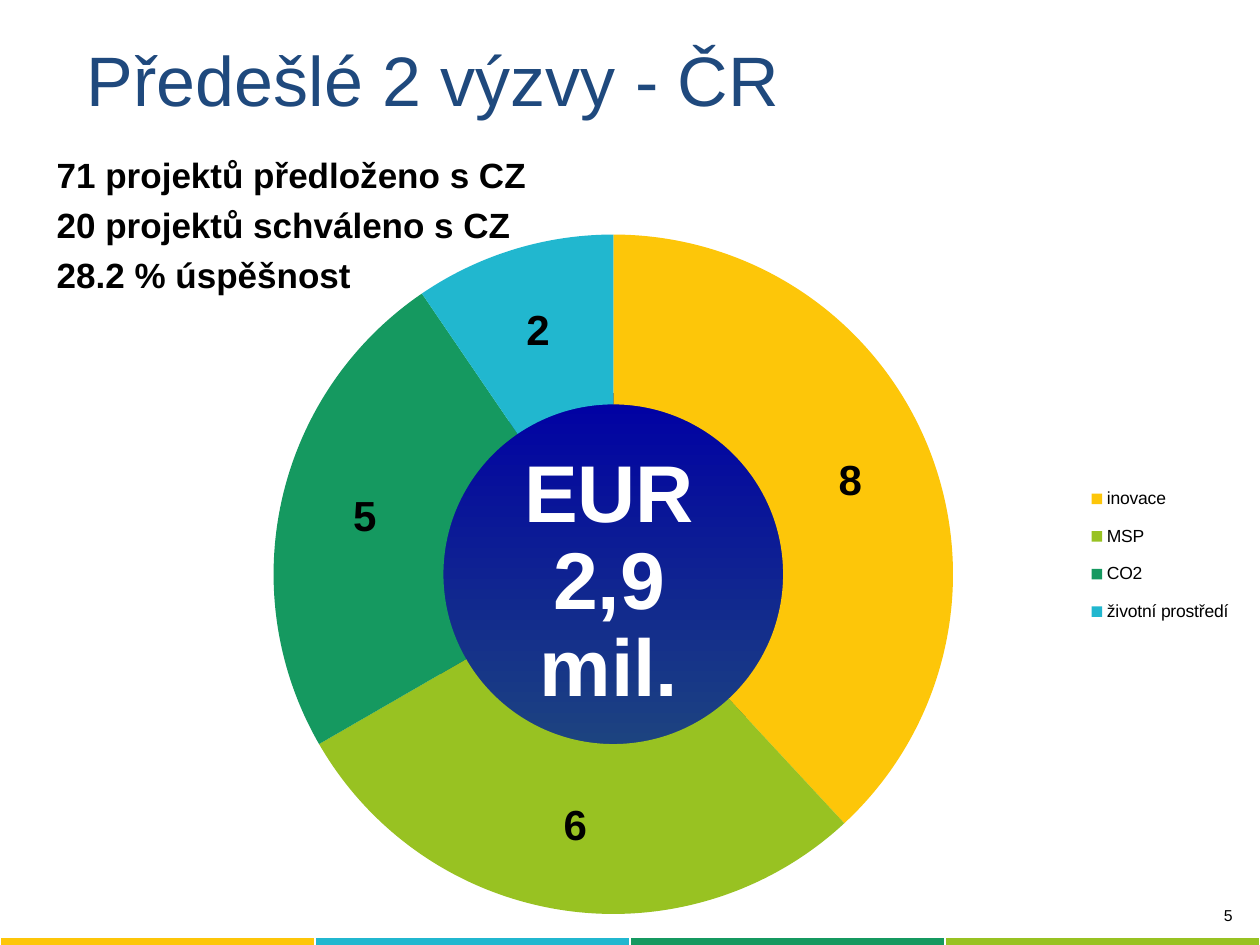
from lxml.etree import SubElement
from pptx import Presentation
from pptx.chart.data import CategoryChartData
from pptx.dml.color import RGBColor
from pptx.enum.chart import XL_CHART_TYPE, XL_LEGEND_POSITION
from pptx.enum.shapes import MSO_SHAPE
from pptx.enum.text import MSO_ANCHOR, MSO_AUTO_SIZE, PP_ALIGN
from pptx.oxml.ns import qn
from pptx.util import Pt

COLORS = {
    "title": "1F497D",
    "text": "000000",
    "inverse": "FFFFFF",
    "hub_top": "0000A4",
    "yellow": "FDC609",
    "lime": "98C222",
    "green": "159960",
    "cyan": "21B7CF",
}
STRIPE = ["yellow", "cyan", "green", "lime"]
THEMES = [
    ("inovace", 8, "yellow"),
    ("MSP", 6, "lime"),
    ("CO2", 5, "green"),
    ("životní prostředí", 2, "cyan"),
]
RESULTS = [
    "71 projektů předloženo s CZ",
    "20 projektů schváleno s CZ",
    "28.2 % úspěšnost",
]


def rgb(name):
    return RGBColor.from_string(COLORS[name])


def points(box):
    return [Pt(length) for length in box]


def apply(target, **values):
    for name, value in values.items():
        setattr(target, name, value)


def style_font(font, size, color="text", bold=False):
    apply(font, name="Arial", size=Pt(size), bold=bold)
    font.color.rgb = rgb(color)


def place(shape, box):
    apply(shape, **dict(zip(("left", "top", "width", "height"), points(box))))


def add_stripe(slide, box):
    table_frame = slide.shapes.add_table(1, len(STRIPE), *points(box))
    for cell, color in zip(table_frame.table.rows[0].cells, STRIPE):
        cell.fill.solid()
        cell.fill.fore_color.rgb = rgb(color)
        apply(cell, margin_left=0, margin_right=0, margin_top=0, margin_bottom=0)
        cell.text_frame.paragraphs[0].font.size = Pt(8)


def add_page_number(slide, box):
    frame = slide.shapes.add_textbox(*points(box)).text_frame
    apply(frame, word_wrap=True, text="5")
    number = frame.paragraphs[0]
    number.alignment = PP_ALIGN.RIGHT
    style_font(number.font, 9)


def fill_title(slide, box):
    title = slide.shapes.title
    place(title, box)
    apply(title.text_frame, text="Předešlé 2 výzvy - ČR",
          vertical_anchor=MSO_ANCHOR.MIDDLE, auto_size=MSO_AUTO_SIZE.NONE)
    heading = title.text_frame.paragraphs[0]
    heading.alignment = PP_ALIGN.LEFT
    style_font(heading.font, 40, "title")


def fill_results(slide, box):
    body = slide.placeholders[1]
    place(body, box)
    apply(body.text_frame, text="\n".join(RESULTS),
          vertical_anchor=MSO_ANCHOR.TOP, auto_size=MSO_AUTO_SIZE.NONE)
    for index, result in enumerate(body.text_frame.paragraphs):
        properties = result._p.get_or_add_pPr()
        properties.set("marL", "0")
        properties.set("indent", "0")
        SubElement(properties, qn("a:buNone"))
        result.space_before = Pt(4.6 if index else 0)
        style_font(result.font, 20, bold=True)


def add_hub(slide, box):
    """Place the budget disc that shows through the doughnut's hole."""
    left, top, width, height = box
    group = slide.shapes.add_group_shape()
    disc = group.shapes.add_shape(MSO_SHAPE.OVAL, *points(box))
    disc.shadow.inherit = False
    disc.line.fill.background()
    disc.fill.gradient()
    disc.fill.gradient_angle = 90
    for stop, color in zip(disc.fill.gradient_stops, ("title", "hub_top")):
        stop.color.rgb = rgb(color)

    inset = 32
    label_box = (left + inset, top + inset, width - 2 * inset, height - 2 * inset)
    frame = group.shapes.add_textbox(*points(label_box)).text_frame
    margin = Pt(4.5)
    apply(frame, word_wrap=True, vertical_anchor=MSO_ANCHOR.MIDDLE,
          margin_left=margin, margin_right=margin,
          margin_top=margin, margin_bottom=margin, text="EUR 2,9 mil.")
    budget = frame.paragraphs[0]
    apply(budget, alignment=PP_ALIGN.CENTER, line_spacing=0.9)
    style_font(budget.font, 46, "inverse", bold=True)


def set_layout(element, fractions, inner=False):
    """Pin a chart part to x, y, w, h given as fractions of the chart."""
    layout = element.find(qn("c:layout"))
    if layout is None:
        layout = SubElement(element, qn("c:layout"))
        anchor = element.find(qn("c:legendPos"))
        if anchor is None:
            element.insert(0, layout)
        else:
            anchor.addnext(layout)
    manual = SubElement(layout, qn("c:manualLayout"))
    entries = [("layoutTarget", "inner")] if inner else []
    entries += [("xMode", "edge"), ("yMode", "edge")]
    entries += zip("xywh", map(str, fractions))
    for tag, value in entries:
        SubElement(manual, qn(f"c:{tag}")).set("val", value)


def add_themes_chart(slide, box):
    data = CategoryChartData()
    data.categories = [theme for theme, _, _ in THEMES]
    data.add_series("Series 1", [count for _, count, _ in THEMES])
    chart = slide.shapes.add_chart(XL_CHART_TYPE.DOUGHNUT, *points(box), data).chart
    apply(chart, has_title=False, has_legend=True)
    style_font(chart.font, 10)
    apply(chart.legend, position=XL_LEGEND_POSITION.RIGHT, include_in_layout=False)
    set_layout(chart.legend._element, (0.84, 0.35, 0.15, 0.22))
    set_layout(chart._chartSpace.chart.plotArea, (0.16, 0.04, 0.58, 0.89), inner=True)

    plot = chart.plots[0]
    apply(plot, vary_by_categories=True, has_data_labels=True)
    apply(plot.data_labels, show_value=True, show_percentage=False)
    style_font(plot.data_labels.font, 24, bold=True)
    for index, (_, _, color) in enumerate(THEMES):
        slice_format = plot.series[0].points[index].format
        slice_format.fill.solid()
        slice_format.fill.fore_color.rgb = rgb(color)
        slice_format.line.fill.background()


def main():
    presentation = Presentation()
    apply(presentation, slide_width=Pt(720), slide_height=Pt(540))
    slide = presentation.slides.add_slide(presentation.slide_layouts[1])
    add_stripe(slide, (0, 535.7, 720, 12.2))
    add_page_number(slide, (569.5, 514, 142, 22))
    fill_title(slide, (42.5, 0, 648, 90))
    add_hub(slide, (239, 224.6, 218, 218))
    fill_results(slide, (25.2, 84.2, 293, 129.6))
    add_themes_chart(slide, (48.2, 116.6, 671.8, 436.3))
    presentation.save("out.pptx")


if __name__ == "__main__":
    main()
